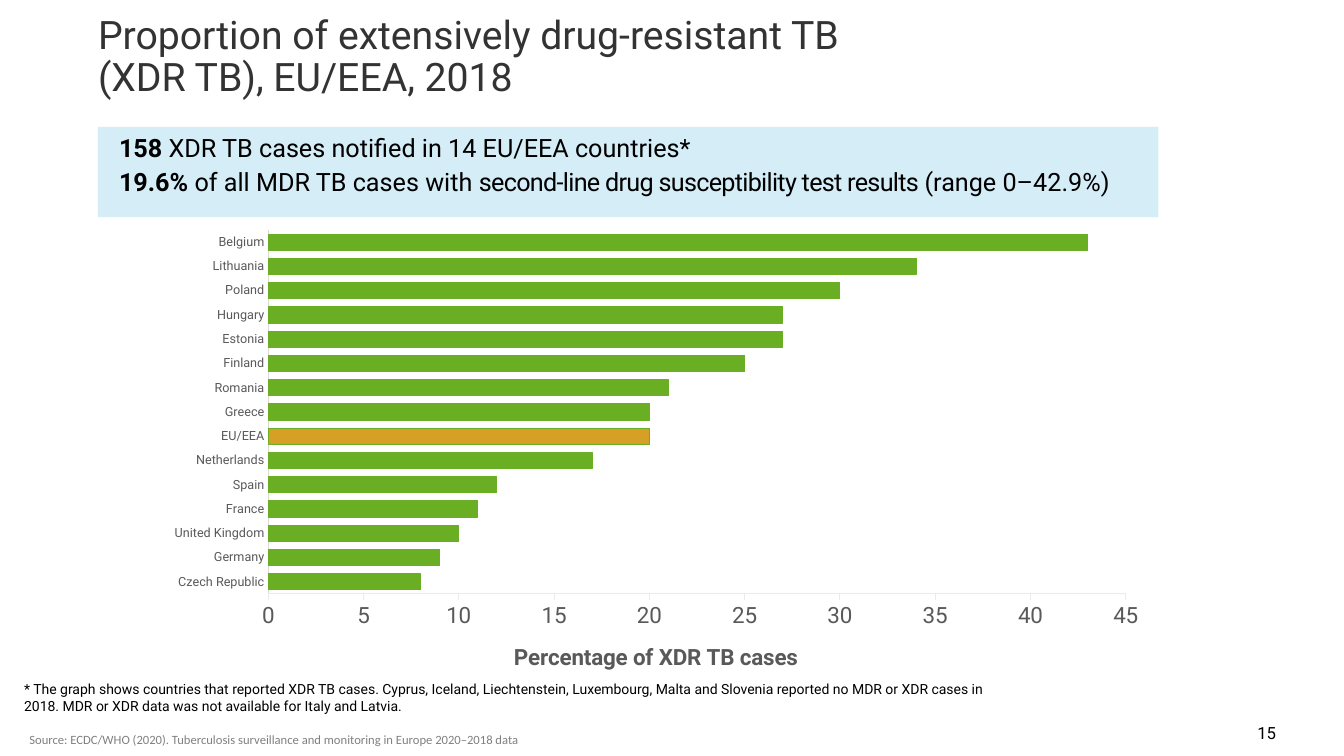
from lxml.etree import SubElement
from pptx import Presentation
from pptx.chart.data import CategoryChartData
from pptx.dml.color import RGBColor
from pptx.enum.chart import XL_CHART_TYPE, XL_TICK_MARK
from pptx.enum.shapes import MSO_SHAPE
from pptx.enum.text import MSO_ANCHOR, PP_ALIGN
from pptx.oxml.ns import qn
from pptx.util import Cm, Pt

GREEN, ORANGE, GREY = "69AE23", "D6A026", "595959"

XDR_PERCENTAGES = {
    "Czech Republic": 8, "Germany": 9, "United Kingdom": 10, "France": 11,
    "Spain": 12, "Netherlands": 17, "EU/EEA": 20, "Greece": 20,
    "Romania": 21, "Finland": 25, "Estonia": 27, "Hungary": 27,
    "Poland": 30, "Lithuania": 34, "Belgium": 43,
}

KEY_FIGURES = [
    [("158 ", True, 0), ("XDR TB cases notified in 14 EU/EEA countries*", False, 0)],
    [("19.6% ", True, 0), ("of all MDR TB cases with ", False, 0),
     ("second-line drug susceptibility test results ", False, -50),
     ("(range 0–42.9%)", False, 0)],
]


def color(hex_string):
    return RGBColor.from_string(hex_string)


def set_layout(parent, position, **values):
    layout = parent.find(qn("c:layout"))
    if layout is None:
        layout = SubElement(parent, qn("c:layout"))
        parent.insert(position, layout)
    manual = SubElement(layout, qn("c:manualLayout"))
    for name, value in values.items():
        SubElement(manual, qn(f"c:{name}")).set("val", str(value))


class SlideBuilder:
    font_name = "Roboto"

    def __init__(self, slide):
        self.slide = slide

    def style(self, font, size, hex_string, bold=False, name=None):
        font.name = name or self.font_name
        font.size = Pt(size)
        font.bold = bold
        font.color.rgb = color(hex_string)

    def set_margins(self, text_frame, horizontal, vertical):
        text_frame.margin_left = text_frame.margin_right = Cm(horizontal)
        text_frame.margin_top = text_frame.margin_bottom = Cm(vertical)

    def title(self, text, left, top, width, height):
        shape = self.slide.shapes.title
        shape.left, shape.top = Cm(left), Cm(top)
        shape.width, shape.height = Cm(width), Cm(height)
        text_frame = shape.text_frame
        text_frame.text = text
        text_frame.word_wrap = True
        text_frame.vertical_anchor = MSO_ANCHOR.TOP
        self.set_margins(text_frame, 0, 0)
        paragraph = text_frame.paragraphs[0]
        paragraph.alignment = PP_ALIGN.LEFT
        paragraph.line_spacing = 0.9
        for run in paragraph.runs:
            self.style(run.font, 28, "333333")

    def text(self, text, left, top, width, height, size, hex_string="000000",
             name=None, align=PP_ALIGN.LEFT, anchor=MSO_ANCHOR.TOP,
             margins=(0.25, 0.13), line_spacing=1.0):
        shape = self.slide.shapes.add_textbox(Cm(left), Cm(top), Cm(width), Cm(height))
        text_frame = shape.text_frame
        text_frame.text = text
        text_frame.word_wrap = True
        text_frame.vertical_anchor = anchor
        self.set_margins(text_frame, *margins)
        paragraph = text_frame.paragraphs[0]
        paragraph.alignment = align
        paragraph.line_spacing = line_spacing
        self.style(paragraph.runs[0].font, size, hex_string, name=name)

    def panel(self, lines, left, top, width, height):
        shape = self.slide.shapes.add_shape(
            MSO_SHAPE.SNIP_2_DIAG_RECTANGLE, Cm(left), Cm(top), Cm(width), Cm(height))
        shape.adjustments[0] = shape.adjustments[1] = 0
        shape.shadow.inherit = False
        shape.line.fill.background()
        shape.fill.solid()
        shape.fill.fore_color.rgb = color("ACDDEF")
        fill_color = shape.fill._xPr.find(f".//{qn('a:srgbClr')}")
        SubElement(fill_color, qn("a:alpha")).set("val", "50000")
        text_frame = shape.text_frame
        text_frame.word_wrap = True
        text_frame.vertical_anchor = MSO_ANCHOR.TOP
        self.set_margins(text_frame, 0.25, 0.13)
        for index, line in enumerate(lines):
            paragraph = text_frame.add_paragraph() if index else text_frame.paragraphs[0]
            paragraph.alignment = PP_ALIGN.LEFT
            paragraph.space_before = Pt(3 if index else 0)
            paragraph._p.get_or_add_pPr().set("marL", str(Cm(0.28)))
            for text, bold, spacing in line:
                run = paragraph.add_run()
                run.text = text
                self.style(run.font, 18, "000000", bold)
                if spacing:
                    run._r.get_or_add_rPr().set("spc", str(spacing))

    def axis(self, axis, size, line_color, tick_mark):
        axis.has_major_gridlines = False
        axis.major_tick_mark = tick_mark
        axis.minor_tick_mark = XL_TICK_MARK.NONE
        axis.format.line.color.rgb = color(line_color)
        axis.format.line.width = Pt(0.75)
        self.style(axis.tick_labels.font, size, GREY)

    def bar_chart(self, values, highlight, axis_title, left, top, width, height):
        chart_data = CategoryChartData()
        chart_data.categories = list(values)
        chart_data.add_series("Series 1", list(values.values()))
        chart = self.slide.shapes.add_chart(
            XL_CHART_TYPE.BAR_CLUSTERED, Cm(left), Cm(top), Cm(width), Cm(height),
            chart_data).chart
        chart.has_legend = False
        chart.has_title = False
        self.style(chart.font, 10, "000000")

        plot = chart.plots[0]
        plot.vary_by_categories = False
        plot.gap_width = 50
        plot.overlap = 70
        series = plot.series[0]
        series.invert_if_negative = False
        highlighted_point = series.points[list(values).index(highlight)]
        for part, fill_color in ((series, GREEN), (highlighted_point, ORANGE)):
            part.format.fill.solid()
            part.format.fill.fore_color.rgb = color(fill_color)
            part.format.line.color.rgb = color(GREEN)
            part.format.line.width = Pt(0.75)

        self.axis(chart.category_axis, 9, "D9D9D9", XL_TICK_MARK.NONE)
        value_axis = chart.value_axis
        self.axis(value_axis, 16, "EEECE1", XL_TICK_MARK.OUTSIDE)
        value_axis.minimum_scale = 0
        value_axis.maximum_scale = 45
        value_axis.major_unit = 5
        value_axis.tick_labels.number_format = "0"
        value_axis.tick_labels.number_format_is_linked = False
        title = value_axis.axis_title
        title.text_frame.text = axis_title
        self.style(title.text_frame.paragraphs[0].runs[0].font, 16, GREY, True)
        set_layout(title._element, 1, xMode="edge", yMode="edge",
                   x=8.96 / width, y=10.54 / height)
        set_layout(chart._chartSpace.chart.plotArea, 0, layoutTarget="inner",
                   xMode="edge", yMode="edge", x=2.87 / width, y=0.24 / height,
                   w=21.61 / width, h=9.17 / height)


def main():
    presentation = Presentation()
    presentation.slide_width, presentation.slide_height = Cm(33.87), Cm(19.05)
    builder = SlideBuilder(presentation.slides.add_slide(presentation.slide_layouts[5]))
    builder.title("Proportion of extensively drug-resistant TB \v(XDR TB), EU/EEA, 2018",
                  2.47, 0.39, 21.79, 2.29)
    builder.text("15", 25.3, 17.96, 7.11, 1.02, 12,
                 align=PP_ALIGN.RIGHT, anchor=MSO_ANCHOR.MIDDLE)
    builder.panel(KEY_FIGURES, 2.47, 3.2, 26.72, 2.27)
    builder.text("Source: ECDC/WHO (2020). Tuberculosis surveillance and monitoring "
                 "in Europe 2020–2018 data", 0.74, 18.49, 14.45, 0.5, 9, "808080",
                 name="Calibri", margins=(0, 0), line_spacing=0.9)
    builder.text("* The graph shows countries that reported XDR TB cases. Cyprus, Iceland, "
                 "Liechtenstein, Luxembourg, Malta and Slovenia reported no MDR or XDR "
                 "cases in 2018. MDR or XDR data was not available for Italy and Latvia.",
                 0.36, 17.02, 25.15, 1.12, 10)
    builder.bar_chart(XDR_PERCENTAGES, "EU/EEA", "Percentage of XDR TB cases",
                      3.89, 5.56, 25.3, 11.91)
    presentation.save("out.pptx")


if __name__ == "__main__":
    main()
